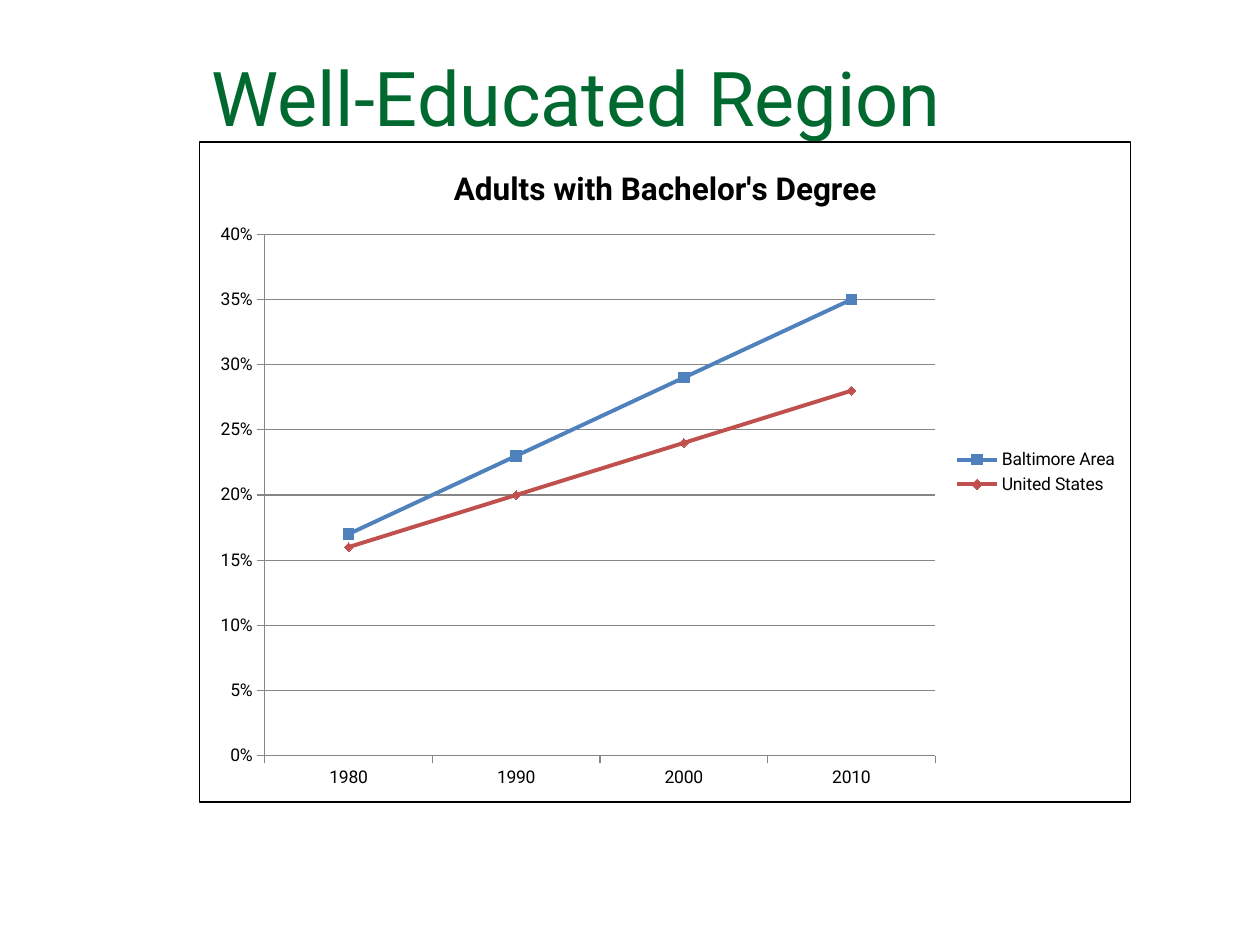
from dataclasses import dataclass

from lxml.etree import fromstring
from pptx import Presentation
from pptx.chart.data import CategoryChartData
from pptx.dml.color import RGBColor
from pptx.enum.chart import XL_CHART_TYPE, XL_LEGEND_POSITION, XL_MARKER_STYLE, XL_TICK_MARK
from pptx.enum.text import MSO_ANCHOR
from pptx.util import Cm, Pt

# Content
TITLE = "Well-Educated Region"
CHART_TITLE = "Adults with Bachelor's Degree"
YEARS = ["1980", "1990", "2000", "2010"]
SERIES = [
    {"name": "Baltimore Area", "values": [0.17, 0.23, 0.29, 0.35],
     "color": "4F81BD", "marker": XL_MARKER_STYLE.SQUARE, "marker_size": 6},
    {"name": "United States", "values": [0.16, 0.20, 0.24, 0.28],
     "color": "C0504D", "marker": XL_MARKER_STYLE.DIAMOND, "marker_size": 5},
]


@dataclass(frozen=True)
class Theme:
    font: str = "Roboto"
    title_color: str = "00692F"
    text_color: str = "000000"
    grid_color: str = "868686"
    title_size: float = 43.2
    chart_title_size: float = 18
    label_size: float = 10
    border_width: float = 0.75
    series_width: float = 2.25


THEME = Theme()
LEFT = Cm(4.01)
TITLE_BOX = (LEFT, Cm(1.17), Cm(18.62), Cm(1.68))
CHART_BOX = (LEFT, Cm(2.85), Cm(18.8), Cm(13.33))
PLOT_AREA = {"x": 0.07, "y": 0.14, "w": 0.72, "h": 0.79}  # fractions of the chart
CHART_NS = "http://schemas.openxmlformats.org/drawingml/2006/chart"
DRAWING_NS = "http://schemas.openxmlformats.org/drawingml/2006/main"


def format_font(font, size, color=THEME.text_color, bold=False):
    font.name, font.size, font.bold = THEME.font, Pt(size), bold
    font.color.rgb = RGBColor.from_string(color)


def write_text(text_frame, text, *, line_spacing=None, **font_format):
    paragraph = text_frame.paragraphs[0]
    paragraph.line_spacing = line_spacing
    run = paragraph.add_run()
    run.text = text
    format_font(run.font, **font_format)


def style_line(line, color, width):
    line.color.rgb = RGBColor.from_string(color)
    line.width = Pt(width)


def add_title(slide):
    text_frame = slide.shapes.add_textbox(*TITLE_BOX).text_frame
    text_frame.word_wrap = True
    text_frame.vertical_anchor = MSO_ANCHOR.BOTTOM
    text_frame.margin_top = text_frame.margin_bottom = 0
    write_text(text_frame, TITLE, size=THEME.title_size,
               color=THEME.title_color, line_spacing=0.8)


def place_plot(chart):
    plot_area = chart._chartSpace.chart.plotArea
    for layout in plot_area.findall(f"{{{CHART_NS}}}layout"):
        plot_area.remove(layout)
    sizes = "".join(f'<c:{key} val="{value}"/>' for key, value in PLOT_AREA.items())
    plot_area.insert(0, fromstring(
        f'<c:layout xmlns:c="{CHART_NS}"><c:manualLayout><c:layoutTarget val="inner"/>'
        f'<c:xMode val="edge"/><c:yMode val="edge"/>{sizes}</c:manualLayout></c:layout>'))


def add_border(chart):
    chart._chartSpace.chart.addnext(fromstring(
        f'<c:spPr xmlns:c="{CHART_NS}" xmlns:a="{DRAWING_NS}"><a:noFill/>'
        f'<a:ln w="{Pt(THEME.border_width)}"><a:solidFill>'
        f'<a:srgbClr val="{THEME.text_color}"/></a:solidFill></a:ln></c:spPr>'))


def add_degree_chart(slide):
    data = CategoryChartData(number_format="0%")
    data.categories = YEARS
    for entry in SERIES:
        data.add_series(entry["name"], entry["values"])
    chart = slide.shapes.add_chart(XL_CHART_TYPE.LINE_MARKERS, *CHART_BOX, data).chart
    format_font(chart.font, THEME.label_size)
    write_text(chart.chart_title.text_frame, CHART_TITLE,
               size=THEME.chart_title_size, bold=True)
    chart.chart_title.include_in_layout = False

    # Legend
    chart.has_legend = True
    chart.legend.position = XL_LEGEND_POSITION.RIGHT
    chart.legend.include_in_layout = False

    # Axes
    for axis in (chart.category_axis, chart.value_axis):
        axis.major_tick_mark = XL_TICK_MARK.OUTSIDE
        axis.minor_tick_mark = XL_TICK_MARK.NONE
        style_line(axis.format.line, THEME.grid_color, THEME.border_width)
    value_axis = chart.value_axis
    value_axis.minimum_scale, value_axis.maximum_scale = 0, 0.4
    value_axis.major_unit = 0.05
    value_axis.tick_labels.number_format = "0%"
    value_axis.tick_labels.number_format_is_linked = False
    style_line(value_axis.major_gridlines.format.line, THEME.grid_color, THEME.border_width)

    # Series
    plot = chart.plots[0]
    plot.vary_by_categories = False
    for series, entry in zip(plot.series, SERIES):
        series.smooth = False
        style_line(series.format.line, entry["color"], THEME.series_width)
        marker = series.marker
        marker.style, marker.size = entry["marker"], entry["marker_size"]
        marker.format.fill.solid()
        marker.format.fill.fore_color.rgb = RGBColor.from_string(entry["color"])
        style_line(marker.format.line, entry["color"], THEME.border_width)

    place_plot(chart)
    add_border(chart)


def main():
    presentation = Presentation()
    presentation.slide_width, presentation.slide_height = Cm(25.4), Cm(19.05)
    slide = presentation.slides.add_slide(presentation.slide_layouts[6])
    add_title(slide)
    add_degree_chart(slide)
    presentation.save("out.pptx")


if __name__ == "__main__":
    main()
